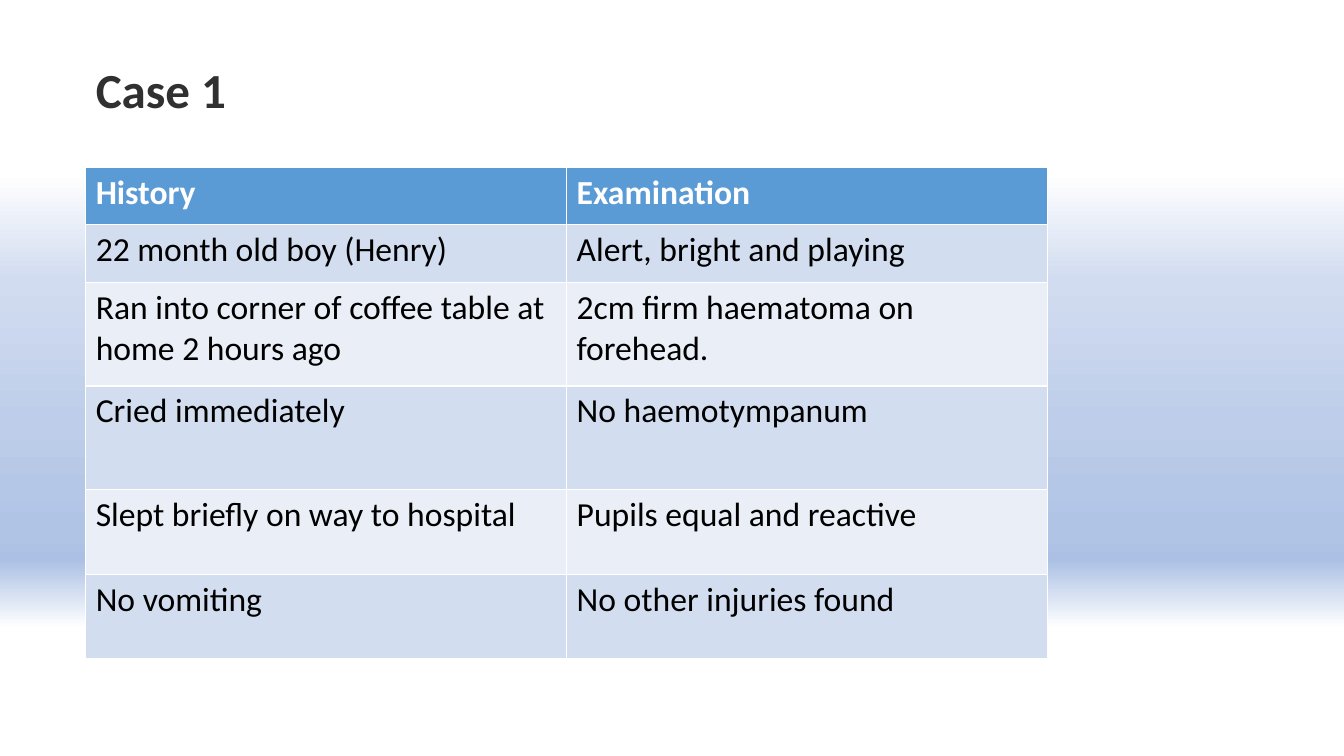
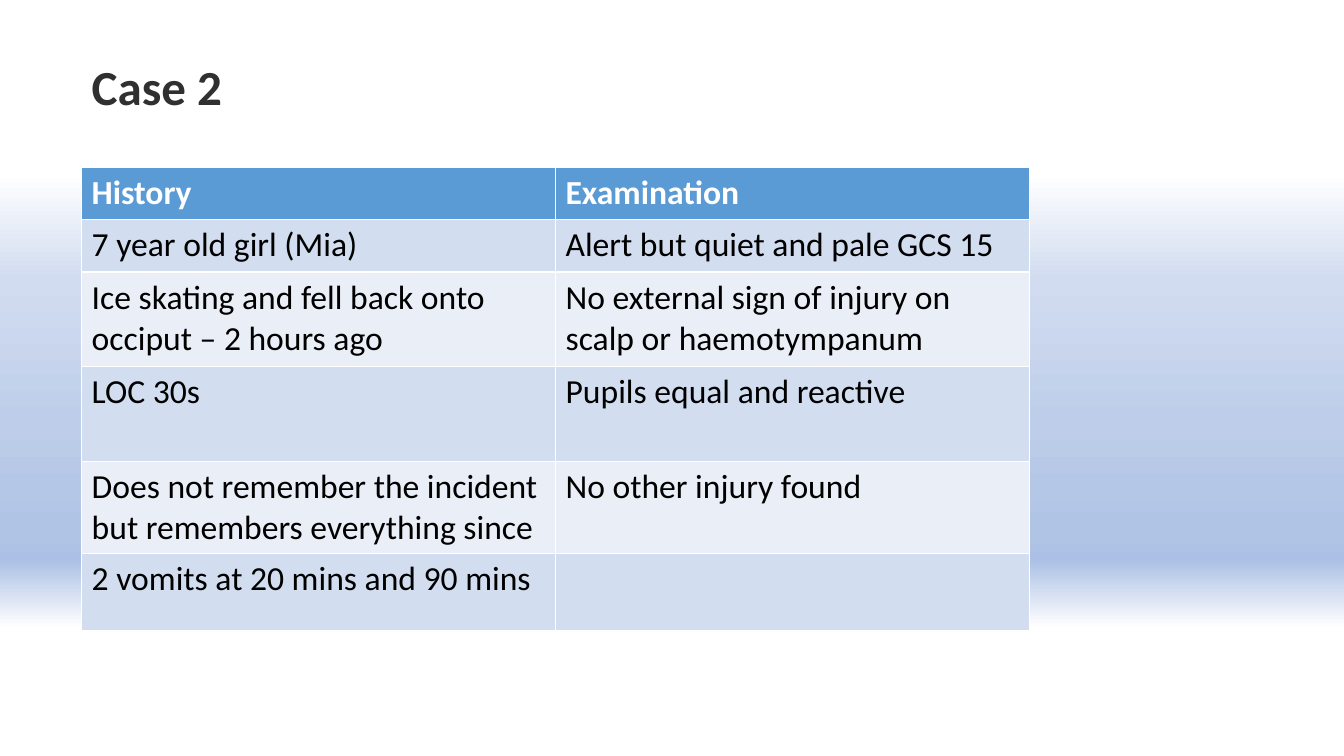
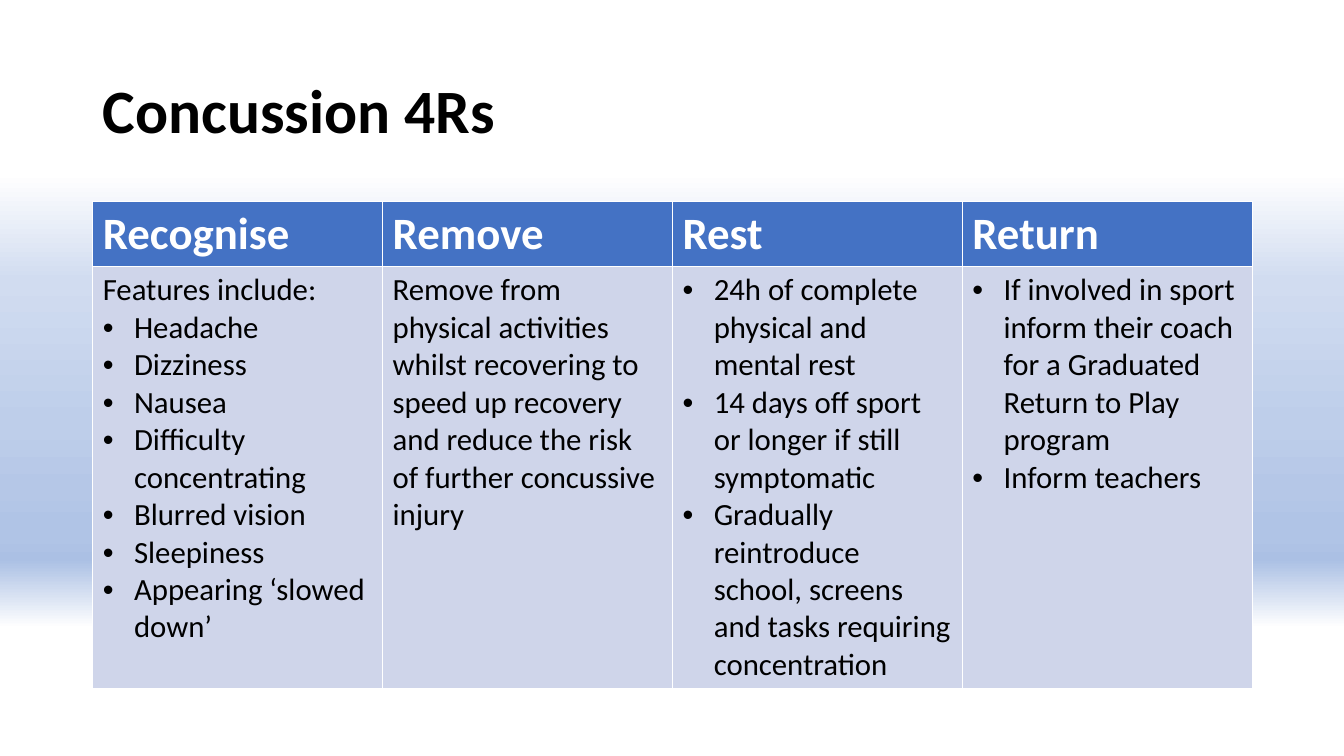
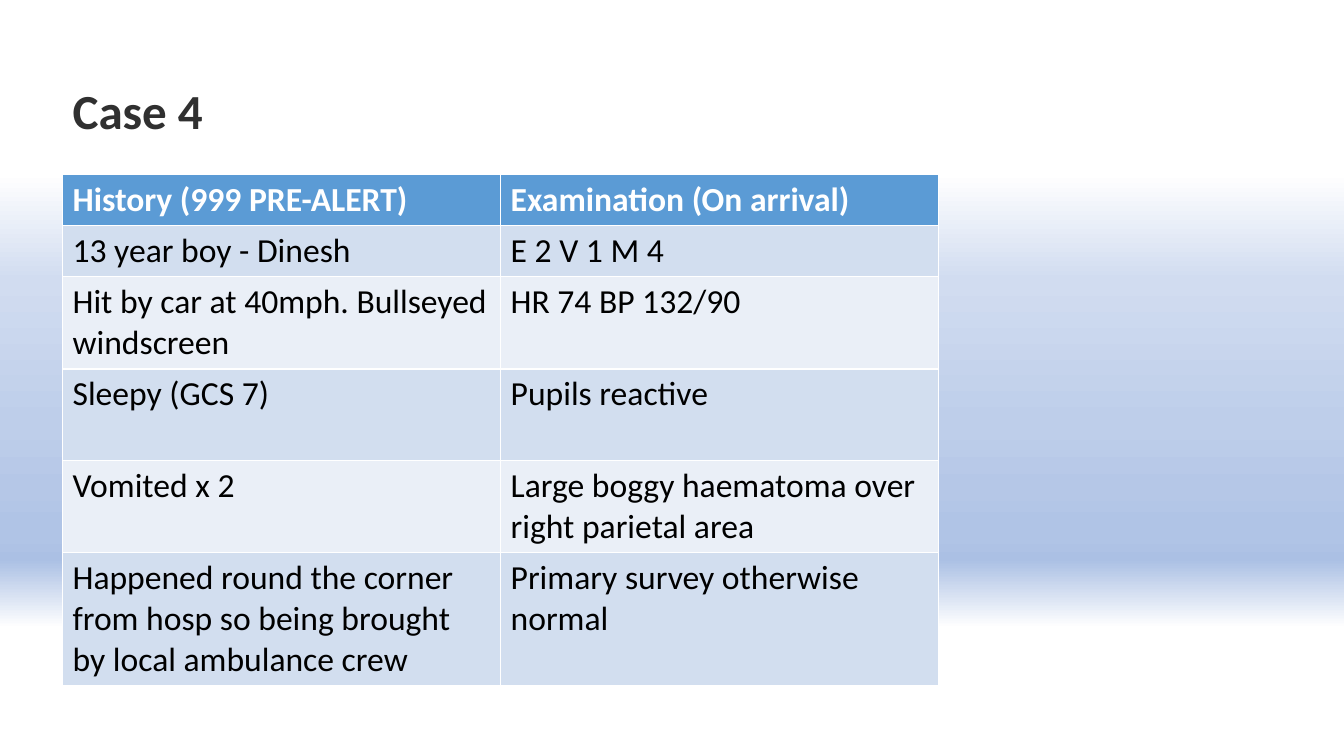
from dataclasses import dataclass

from lxml.etree import SubElement
from pptx import Presentation
from pptx.dml.color import RGBColor
from pptx.enum.text import MSO_ANCHOR, MSO_AUTO_SIZE, PP_ALIGN
from pptx.oxml.ns import qn
from pptx.presentation import Presentation as Deck
from pptx.slide import Slide, SlideMaster
from pptx.table import _Cell as TableCell
from pptx.text.text import _Paragraph as Para
from pptx.util import Inches, Pt

FONT = "Calibri"
WHITE = RGBColor(0xFF, 0xFF, 0xFF)
BLACK = RGBColor(0x00, 0x00, 0x00)
CHARCOAL = RGBColor(0x30, 0x30, 0x30)
SKY_HEADER = RGBColor(0x5B, 0x9B, 0xD5)
SKY_BAND = RGBColor(0xD2, 0xDE, 0xEF)
SKY_PALE = RGBColor(0xEA, 0xEF, 0xF7)
ROYAL_HEADER = RGBColor(0x44, 0x72, 0xC4)
ROYAL_BAND = RGBColor(0xCF, 0xD5, 0xEA)

BACKGROUND_STOPS = (
    (23, WHITE),
    (37, RGBColor(0xD1, 0xDC, 0xF0)),
    (56, RGBColor(0xBE, 0xCE, 0xEA)),
    (65, RGBColor(0xB5, 0xC7, 0xE7)),
    (69, RGBColor(0xB0, 0xC4, 0xE6)),
    (72, RGBColor(0xAE, 0xC2, 0xE5)),
    (73, RGBColor(0xAD, 0xC1, 0xE5)),
    (73, RGBColor(0xAB, 0xC0, 0xE4)),
    (74, RGBColor(0xAB, 0xC0, 0xE4)),
    (83, WHITE),
)


@dataclass(frozen=True)
class TableStyle:
    header_fill: RGBColor
    bands: tuple[RGBColor, ...]
    header_size: int
    body_size: int


@dataclass(frozen=True)
class TitleStyle:
    width: float
    height: float
    size: int
    color: RGBColor


@dataclass(frozen=True)
class Entry:
    text: str = ""
    bullets: tuple[str, ...] = ()


@dataclass(frozen=True)
class TablePage:
    title: str
    left: float
    title_top: float
    table_top: float
    table_width: float
    row_heights: tuple[float, ...]
    rows: tuple[tuple[str | Entry, ...], ...]
    title_style: TitleStyle
    table_style: TableStyle


CASE_TITLE = TitleStyle(4.67, 1.2, 35, CHARCOAL)
TOPIC_TITLE = TitleStyle(9.34, 1.45, 44, BLACK)
CASE_TABLE = TableStyle(SKY_HEADER, (SKY_BAND, SKY_PALE), 24, 24)
TOPIC_TABLE = TableStyle(ROYAL_HEADER, (ROYAL_BAND,), 32, 22)

PAGES = (
    TablePage(
        "Case 1", 0.85, 0.32, 1.66, 9.54,
        (0.57, 0.57, 1.03, 1.03, 0.84, 0.84),
        (
            ("History", "Examination"),
            ("22 month old boy (Henry)", "Alert, bright and playing"),
            ("Ran into corner of coffee table at home 2 hours ago",
             "2cm firm haematoma on forehead."),
            ("Cried immediately", "No haemotympanum"),
            ("Slept briefly on way to hospital", "Pupils equal and reactive"),
            ("No vomiting", "No other injuries found"),
        ),
        CASE_TITLE, CASE_TABLE,
    ),
    TablePage(
        "Case 2", 0.81, 0.29, 1.66, 9.4,
        (0.52, 0.52, 0.94, 0.94, 0.91, 0.76),
        (
            ("History", "Examination"),
            ("7 year old girl (Mia)", "Alert but quiet and pale GCS 15"),
            ("Ice skating and fell back onto occiput – 2 hours ago",
             "No external sign of injury on scalp or haemotympanum"),
            ("LOC 30s", "Pupils equal and reactive"),
            ("Does not remember the incident but remembers everything since",
             "No other injury found"),
            ("2 vomits at 20 mins and 90 mins", ""),
        ),
        CASE_TITLE, CASE_TABLE,
    ),
    TablePage(
        "Concussion 4Rs", 0.92, 0.4, 2, 11.5,
        (0.63, 4.18),
        (
            ("Recognise", "Remove", "Rest", "Return"),
            (
                Entry("Features include:", (
                    "Headache", "Dizziness", "Nausea",
                    "Difficulty concentrating", "Blurred vision",
                    "Sleepiness", "Appearing ‘slowed down’",
                )),
                "Remove from physical activities whilst recovering to speed up "
                "recovery and reduce the risk of further concussive injury",
                Entry(bullets=(
                    "24h of complete physical and mental rest",
                    "14 days off sport or longer if still symptomatic",
                    "Gradually reintroduce school, screens and tasks "
                    "requiring concentration",
                )),
                Entry(bullets=(
                    "If involved in sport inform their coach for a Graduated "
                    "Return to Play program",
                    "Inform teachers",
                )),
            ),
        ),
        TOPIC_TITLE, TOPIC_TABLE,
    ),
    TablePage(
        "Case 4", 0.62, 0.53, 1.73, 8.69,
        (0.5, 0.51, 0.91, 0.91, 0.91, 1.32),
        (
            ("History (999 PRE-ALERT)", "Examination (On arrival)"),
            ("13 year boy - Dinesh", "E 2 V 1 M 4"),
            ("Hit by car at 40mph. Bullseyed windscreen", "HR 74 BP 132/90"),
            ("Sleepy (GCS 7)", "Pupils reactive"),
            ("Vomited x 2", "Large boggy haematoma over right parietal area"),
            ("Happened round the corner from hosp so being brought by local "
             "ambulance crew", "Primary survey otherwise normal"),
        ),
        CASE_TITLE, CASE_TABLE,
    ),
)


def set_background(master: SlideMaster) -> None:
    fill = master.background.fill
    fill.gradient()
    fill.gradient_angle = 270
    stop_list = next(master.element.iter(qn("a:gsLst")))
    for stop in list(stop_list):
        stop_list.remove(stop)
    for percent, color in BACKGROUND_STOPS:
        stop = SubElement(stop_list, qn("a:gs"), pos=str(percent * 1000))
        SubElement(stop, qn("a:srgbClr"), val=str(color))


def format_runs(para: Para, size: int, color: RGBColor, bold: bool) -> None:
    for span in para.runs:
        span.font.name = FONT
        span.font.size = Pt(size)
        span.font.bold = bold
        span.font.color.rgb = color


def add_bullet(para: Para) -> None:
    properties = para._p.get_or_add_pPr()
    properties.set("marL", str(Inches(0.31)))
    properties.set("indent", str(-Inches(0.31)))
    SubElement(properties, qn("a:buFont"), typeface="Arial")
    SubElement(properties, qn("a:buChar"), char="•")


def add_title(page: Slide, content: TablePage) -> None:
    style = content.title_style
    title = page.shapes.title
    title.left, title.top = Inches(content.left), Inches(content.title_top)
    title.width, title.height = Inches(style.width), Inches(style.height)
    frame = title.text_frame
    frame.text = content.title
    frame.word_wrap = True
    frame.auto_size = MSO_AUTO_SIZE.NONE
    frame.vertical_anchor = MSO_ANCHOR.MIDDLE
    para = frame.paragraphs[0]
    para.alignment = PP_ALIGN.LEFT
    para.line_spacing = 0.9
    format_runs(para, style.size, style.color, True)


def fill_cell(cell: TableCell, entry: Entry, fill: RGBColor,
              size: int, color: RGBColor, bold: bool) -> None:
    cell.fill.solid()
    cell.fill.fore_color.rgb = fill
    intro = (entry.text,) if entry.text else ()
    frame = cell.text_frame
    frame.text = "\n".join(intro + entry.bullets)
    for index, para in enumerate(frame.paragraphs):
        if entry.bullets and index >= len(intro):
            add_bullet(para)
        format_runs(para, size, color, bold)


def add_case_table(page: Slide, content: TablePage) -> None:
    style = content.table_style
    column_count = len(content.rows[0])
    table = page.shapes.add_table(
        len(content.rows), column_count,
        Inches(content.left), Inches(content.table_top),
        Inches(content.table_width), Inches(sum(content.row_heights)),
    ).table
    for column in table.columns:
        column.width = Inches(content.table_width / column_count)
    for row_index, values in enumerate(content.rows):
        table.rows[row_index].height = Inches(content.row_heights[row_index])
        if row_index == 0:
            look = (style.header_fill, style.header_size, WHITE, True)
        else:
            band = style.bands[(row_index - 1) % len(style.bands)]
            look = (band, style.body_size, BLACK, False)
        for column_index, value in enumerate(values):
            entry = value if isinstance(value, Entry) else Entry(value)
            fill_cell(table.cell(row_index, column_index), entry, *look)


def add_page(deck: Deck, content: TablePage) -> None:
    page = deck.slides.add_slide(deck.slide_layouts.get_by_name("Title Only"))
    add_title(page, content)
    add_case_table(page, content)


def main() -> None:
    deck = Presentation()
    deck.slide_width, deck.slide_height = Inches(13.33), Inches(7.5)
    set_background(deck.slide_master)
    for content in PAGES:
        add_page(deck, content)
    deck.save("out.pptx")


if __name__ == "__main__":
    main()
